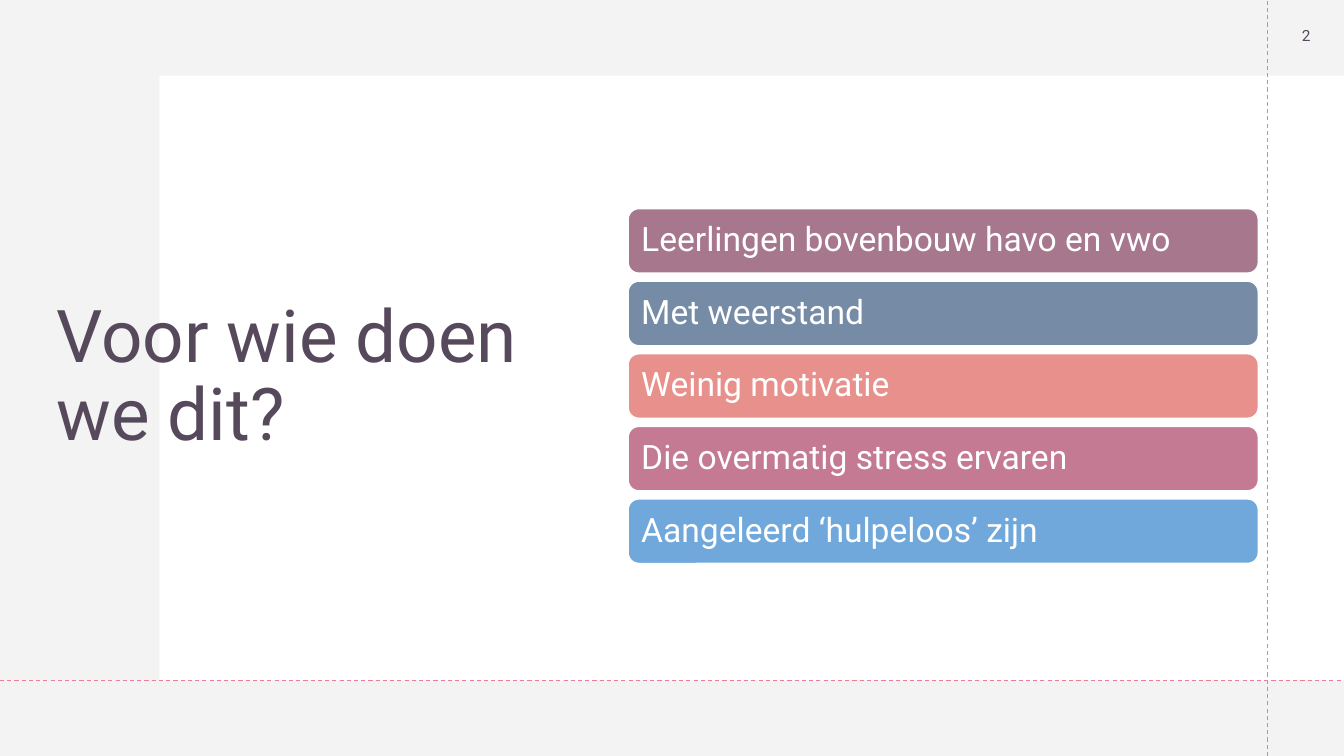
from pptx import Presentation
from pptx.dml.color import RGBColor
from pptx.enum import dml, shapes, text
from pptx.oxml import ns
from pptx.util import Inches, Pt
from lxml import etree

HUES = {
    "white": "FFFFFF", "grey": "F3F3F3", "ink": "57495C",
    "pink": "F07C98", "rule": "A0A0A0", "mauve": "A6778D",
    "slate": "768BA6", "coral": "E8908B", "rose": "C47A93", "blue": "70A8DB",
}
FONT = "Roboto"
GROUPS = [
    ("Leerlingen bovenbouw havo en vwo", "mauve"),
    ("Met weerstand", "slate"),
    ("Weinig motivatie", "coral"),
    ("Die overmatig stress ervaren", "rose"),
    ("Aangeleerd ‘hulpeloos’ zijn", "blue"),
]


def hue(name):
    """Return a named colour."""
    return RGBColor.from_string(HUES[name])


def write(shape, words, size, color):
    """Put one styled paragraph in a shape, centred in height."""
    frame = shape.text_frame
    frame.word_wrap = True
    frame.auto_size = text.MSO_AUTO_SIZE.NONE
    frame.vertical_anchor = text.MSO_ANCHOR.MIDDLE
    frame.text = words
    para = frame.paragraphs[0]
    para.font.name = FONT
    para.font.size = Pt(size)
    para.font.color.rgb = hue(color)
    return para


def block(slide, kind, box, color):
    """Add a filled shape without line or shadow."""
    shape = slide.shapes.add_shape(kind, *map(Inches, box))
    shape.shadow.inherit = False
    shape.fill.solid()
    shape.fill.fore_color.rgb = hue(color)
    shape.line.fill.background()
    return shape


def dash(slide, ends, color):
    """Add a thin dashed rule."""
    line = slide.shapes.add_connector(
        shapes.MSO_CONNECTOR.STRAIGHT, *map(Inches, ends))
    line.line.color.rgb = hue(color)
    line.line.width = Pt(0.75)
    line.line.dash_style = dml.MSO_LINE.DASH
    etree.SubElement(line.element.spPr, ns.qn("a:effectLst"))


def frame(slide, box):
    """Draw the grey ground, white panel and dashed guides."""
    left, top, wide, high = box
    slide.background.fill.solid()
    slide.background.fill.fore_color.rgb = hue("grey")
    panel = (left + 1.58, top + 0.75, wide - 1.58, high - 1.5)
    block(slide, shapes.MSO_SHAPE.RECTANGLE, panel, "white")
    side, base = left + wide - 0.76, top + high - 0.75
    dash(slide, (side, top + high, side, top), "rule")
    dash(slide, (left, base, left + wide, base), "pink")


def head(slide, box, words):
    """Place the title in front of the panel."""
    title = slide.shapes.title
    title.left, title.top, title.width, title.height = map(Inches, box)
    para = write(title, words, 52, "ink")
    para.alignment = text.PP_ALIGN.LEFT
    para.line_spacing = 0.9
    title.element.getparent().append(title.element)


def folio(slide, box, number):
    """Place the page number."""
    note = slide.shapes.add_textbox(*map(Inches, box))
    para = write(note, number, 11, "ink")
    para.alignment = text.PP_ALIGN.CENTER
    para.space_after = Pt(6)


def bars(slide, box, items, gap=0.08):
    """Stack one rounded bar per item in the box."""
    left, top, wide, high = box
    step = (high + gap) / len(items)
    for row, (words, color) in enumerate(items):
        bar = block(slide, shapes.MSO_SHAPE.ROUNDED_RECTANGLE,
                    (left, top + row * step, wide, step - gap), color)
        bar.line.color.rgb = hue("white")
        bar.line.width = Pt(1)
        para = write(bar, words, 24, "white")
        para.alignment = text.PP_ALIGN.LEFT
        para.line_spacing = 0.9
        para.space_after = Pt(8.4)
        bar.text_frame.margin_left = bar.text_frame.margin_right = Inches(0.1)


def main():
    """Build and save the slide."""
    deck = Presentation()
    deck.slide_width, deck.slide_height = Inches(13.33), Inches(7.5)
    slide = deck.slides.add_slide(deck.slide_layouts.get_by_name("Title Only"))
    frame(slide, (0, 0, 13.33, 7.5))
    head(slide, (0.46, 1.03, 5.54, 5.44), "Voor wie doen we dit?")
    folio(slide, (12.58, -0.02, 0.75, 0.75), "2")
    bars(slide, (6.23, 2.07, 6.25, 3.52), GROUPS)
    deck.save("out.pptx")


if __name__ == "__main__":
    main()
